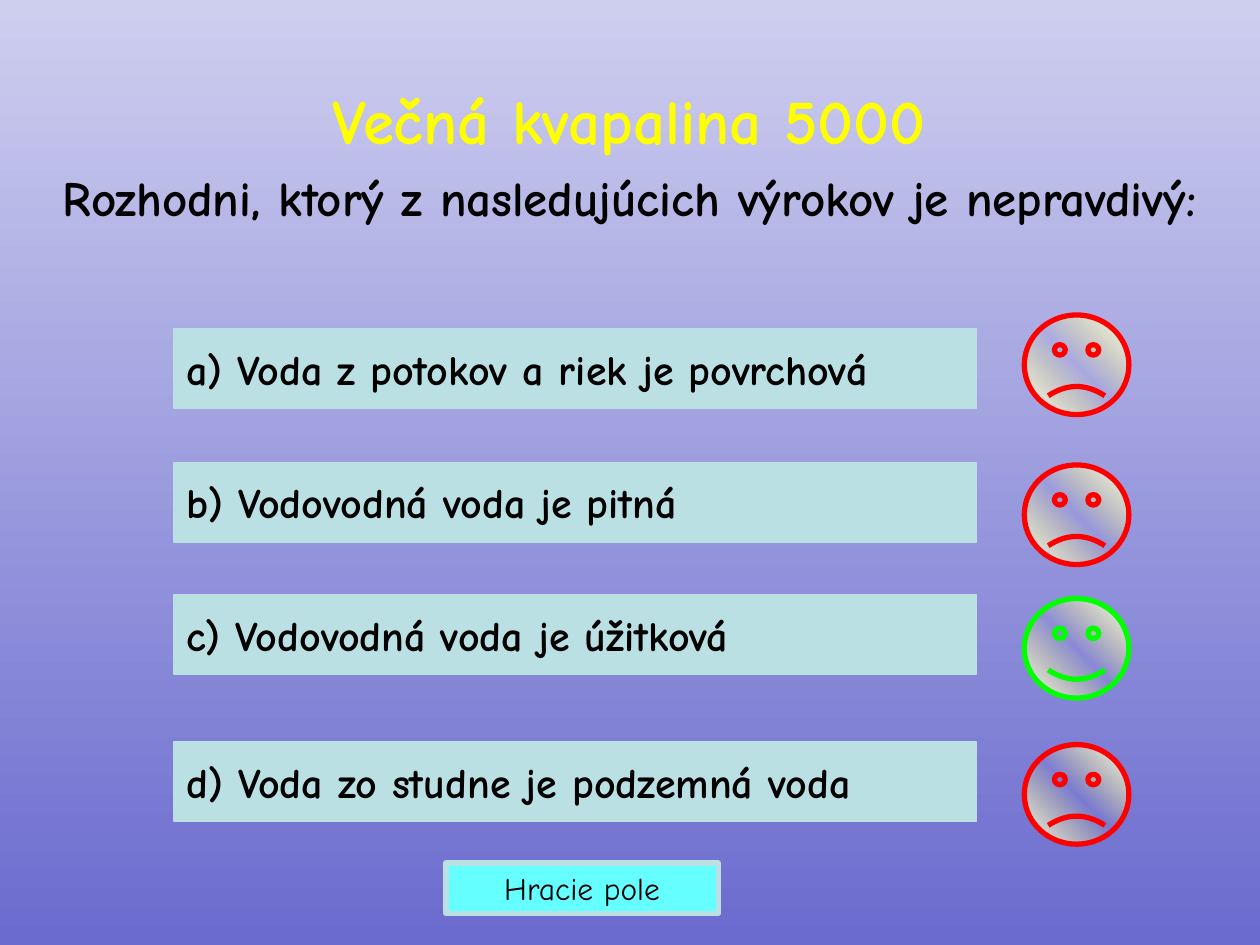
import copy
from dataclasses import dataclass

import pptx
import pptx.dml.color
import pptx.enum.shapes
import pptx.enum.text
import pptx.oxml
import pptx.oxml.ns
import pptx.util

KIND = pptx.enum.shapes.MSO_SHAPE
ALIGN = pptx.enum.text.PP_ALIGN
ANCHOR = pptx.enum.text.MSO_ANCHOR


@dataclass(frozen=True)
class Theme:
    font: str = "Comic Neue"
    sky: str = "CECEEF"
    deep: str = "6B6BCF"
    head: str = "FFFF00"
    ink: str = "000000"
    pale: str = "BBE0E3"
    aqua: str = "66FFFF"
    white: str = "FFFFFF"
    glow: str = "FFFF66"
    good: str = "00FF00"
    bad: str = "FF0000"
    big: int = 36
    lead: int = 28
    body: int = 24
    small: int = 18


THEME = Theme()
WIDE, HIGH = 10, 7.5
LEFT, SPAN, TALL = 1.38, 6.37, 0.63
FACE_X, FACE_W, FACE_H = 8.13, 0.83, 0.79
ROWS = [
    ("a) Voda z potokov a riek je povrchová", 2.61, 2.5, False),
    ("b) Vodovodná voda je pitná", 3.67, 3.69, False),
    ("c) Vodovodná voda je úžitková", 4.72, 4.75, True),
    ("d) Voda zo studne je podzemná voda", 5.89, 5.91, False),
]


def rgb(code):
    return pptx.dml.color.RGBColor.from_string(code)


def box(*sides):
    return [pptx.util.Inches(side) for side in sides]


def style(para, size, tone, bold, align):
    para.alignment = align
    for run in para.runs:
        run.font.name = THEME.font
        run.font.size = pptx.util.Pt(size)
        run.font.bold = bold
        run.font.color.rgb = rgb(tone)


def blend(fill, first, last, angle):
    fill.gradient()
    fill.gradient_angle = angle
    for stop, tone in zip(fill.gradient_stops, (first, last)):
        stop.color.rgb = rgb(tone)


def shape(slide, kind, place, line, width):
    item = slide.shapes.add_shape(kind, *box(*place))
    item.shadow.inherit = False
    item.line.color.rgb = rgb(line)
    item.line.width = pptx.util.Pt(width)
    return item


def title(slide, lines):
    item = slide.shapes.title
    item.left, item.top, item.width, item.height = box(0.39, 0.6, 9.21, 0.75)
    frame = item.text_frame
    frame.text = "\n".join(text for text, size, tone in lines)
    frame.word_wrap = True
    frame.auto_size = pptx.enum.text.MSO_AUTO_SIZE.NONE
    frame.vertical_anchor = ANCHOR.TOP
    for para, (text, size, tone) in zip(frame.paragraphs, lines):
        style(para, size, tone, True, ALIGN.CENTER)
        para.space_before = pptx.util.Pt(size * 0.2)


def button(slide, text, place, fill, width, size, bold, align):
    item = shape(slide, KIND.ACTION_BUTTON_CUSTOM, place, THEME.pale, width)
    item.fill.solid()
    item.fill.fore_color.rgb = rgb(fill)
    frame = item.text_frame
    frame.text = text
    frame.word_wrap = True
    frame.vertical_anchor = ANCHOR.MIDDLE
    style(frame.paragraphs[0], size, THEME.ink, bold, align)


def face(slide, top, happy):
    tone = THEME.good if happy else THEME.bad
    place = (FACE_X, top, FACE_W, FACE_H)
    item = shape(slide, KIND.SMILEY_FACE, place, tone, 3)
    item.adjustments[0] = 0.047 if happy else -0.047
    blend(item.fill, THEME.white, THEME.white, 45)
    name = pptx.oxml.ns.qn
    stops = next(item.element.iter(name("a:gsLst")))
    mid = copy.deepcopy(stops[0])
    mid.set("pos", "50000")
    color = mid.find(name("a:srgbClr"))
    color.set("val", THEME.glow)
    space = pptx.oxml.ns.nsdecls("a")
    color.append(pptx.oxml.parse_xml(f'<a:alpha {space} val="0"/>'))
    stops.insert(1, mid)


def main():
    deck = pptx.Presentation()
    deck.slide_width, deck.slide_height = box(WIDE, HIGH)
    slide = deck.slides.add_slide(deck.slide_layouts[5])
    blend(slide.background.fill, THEME.sky, THEME.deep, 270)
    title(slide, [
        ("Večná kvapalina 5000", THEME.big, THEME.head),
        ("Rozhodni, ktorý z nasledujúcich výrokov je nepravdivý:",
         THEME.lead, THEME.ink),
    ])
    for text, top, spot, happy in ROWS:
        button(slide, text, (LEFT, top, SPAN, TALL), THEME.pale, 1,
               THEME.body, True, ALIGN.LEFT)
        face(slide, spot, happy)
    button(slide, "Hracie pole", (3.54, 6.85, 2.16, 0.4), THEME.aqua, 3,
           THEME.small, False, ALIGN.CENTER)
    deck.save("out.pptx")


if __name__ == "__main__":
    main()
